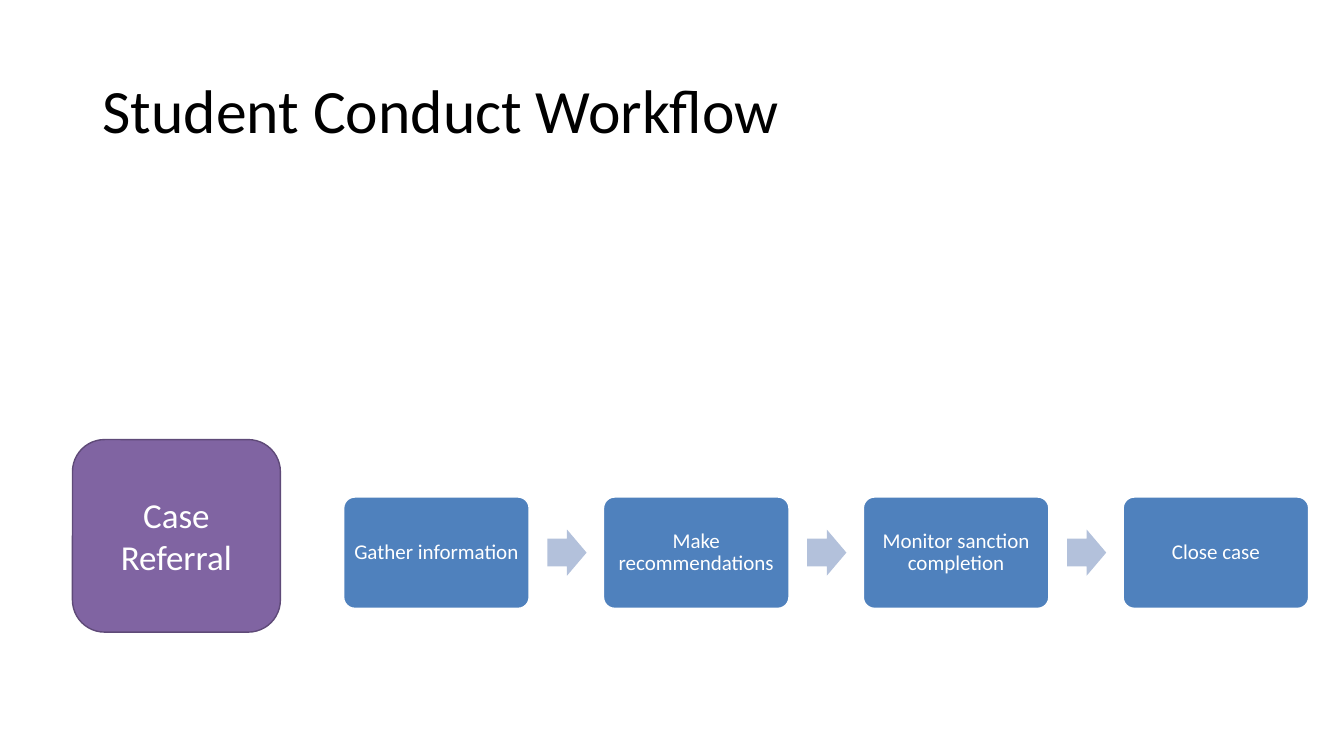
from pptx import Presentation
from pptx.dml.color import RGBColor
from pptx.enum.shapes import MSO_SHAPE as SHAPE
from pptx.enum.text import MSO_ANCHOR as ANCHOR, MSO_AUTO_SIZE as AUTO_SIZE, PP_ALIGN as ALIGN
from pptx.util import Pt

FONT = "Calibri"
COLORS = {
    "title": "000000",
    "text": "FFFFFF",
    "step": "4F81BD",
    "step_line": "FFFFFF",
    "arrow": "B3C1DB",
    "referral": "8064A2",
    "referral_line": "5F4A78",
}
STEPS = ["Gather information", "Make recommendations",
         "Monitor sanction completion", "Close case"]


def color(name):
    return RGBColor.from_string(COLORS[name])


def write(sp, text, size, color_name, align, spacing=1.0):
    tf = sp.text_frame
    tf.word_wrap = True
    tf.auto_size = AUTO_SIZE.NONE
    tf.vertical_anchor = ANCHOR.MIDDLE
    p = tf.paragraphs[0]
    p.alignment = align
    p.line_spacing = spacing
    r = p.add_run()
    r.text = text
    r.font.name = FONT
    r.font.size = Pt(size)
    r.font.color.rgb = color(color_name)


def add_block(slide, kind, box, fill, line=None):
    """Add a flat preset shape; without a line colour it has no outline."""
    sp = slide.shapes.add_shape(kind, *map(Pt, box))
    sp.shadow.inherit = False
    sp.fill.solid()
    sp.fill.fore_color.rgb = color(fill)
    if line:
        sp.line.color.rgb = color(line)
        sp.line.width = Pt(1)
    else:
        sp.line.fill.background()
    return sp


def add_title(slide, box, text):
    sp = slide.shapes.title
    sp.left, sp.top, sp.width, sp.height = map(Pt, box)
    write(sp, text, 44, "title", ALIGN.LEFT, 0.9)


def add_referral(slide, box, text):
    sp = add_block(slide, SHAPE.ROUNDED_RECTANGLE, box, "referral", "referral_line")
    write(sp, text, 25, "text", ALIGN.CENTER)


def add_process(slide, box, steps):
    """Spread the steps evenly over the box, with an arrow in each gap."""
    left, top, width, height = box
    step_w = 132.5
    arrow_w, arrow_h = 28, 33
    arrow_gap = 13
    pitch = (width - step_w) / (len(steps) - 1)
    for i, text in enumerate(steps):
        x = left + i * pitch
        if i:
            arrow_x = x - pitch + step_w + arrow_gap
            arrow_y = top + (height - arrow_h) / 2
            arrow = add_block(slide, SHAPE.RIGHT_ARROW,
                              (arrow_x, arrow_y, arrow_w, arrow_h), "arrow")
            arrow.adjustments[0] = 0.6
        sp = add_block(slide, SHAPE.ROUNDED_RECTANGLE,
                       (x, top, step_w, height), "step", "step_line")
        sp.adjustments[0] = 0.1
        tf = sp.text_frame
        tf.margin_left = tf.margin_right = Pt(4.5)
        write(sp, text, 15, "text", ALIGN.CENTER, 0.9)


def main():
    prs = Presentation()
    prs.slide_width, prs.slide_height = Pt(960), Pt(540)
    slide = prs.slides.add_slide(prs.slide_layouts[5])
    add_title(slide, (66, 28.75, 828, 104.4), "Student Conduct Workflow")
    add_process(slide, (245.5, 355, 689.3, 79.5), STEPS)
    add_referral(slide, (51.75, 314, 148.5, 137.5), "Case Referral")
    prs.save("out.pptx")


if __name__ == "__main__":
    main()
